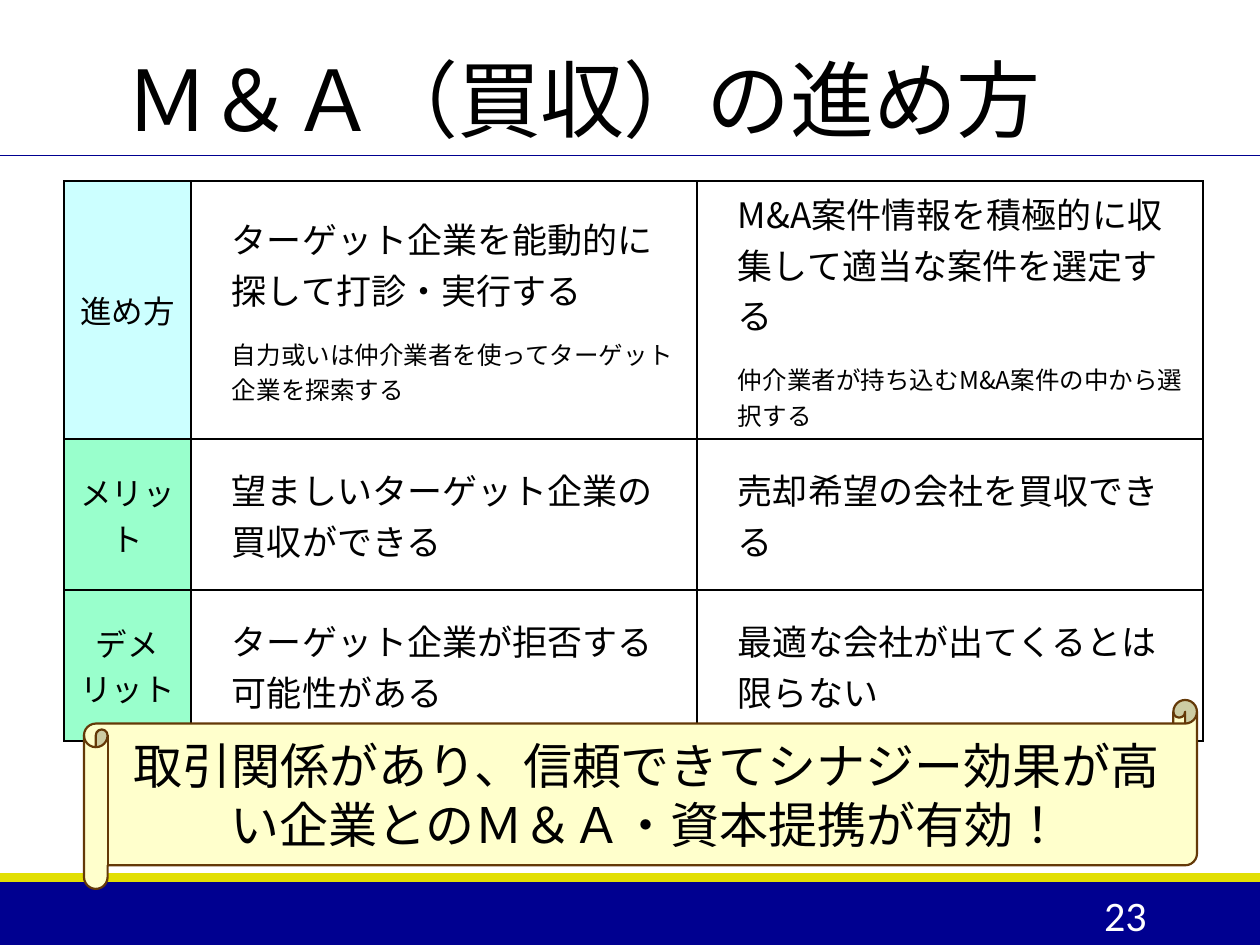
"""Build the slide comparing two ways of proceeding with an acquisition."""
from dataclasses import dataclass

from lxml.etree import SubElement
from pptx import Presentation
from pptx.dml.color import RGBColor
from pptx.enum.shapes import MSO_CONNECTOR, MSO_SHAPE
from pptx.enum.text import MSO_ANCHOR, PP_ALIGN
from pptx.oxml.ns import qn
from pptx.util import Pt

PIXEL = 914400 / 126


@dataclass(frozen=True)
class Theme:
    navy: str = "000090"
    yellow: str = "E2DF04"
    white: str = "FFFFFF"
    black: str = "000000"
    cyan: str = "CCFFFF"
    green: str = "99FFCC"
    cream: str = "FFFFCC"
    brown: str = "643908"
    heading_font: str = "Calibri"
    body_font: str = "Noto Sans CJK JP"
    title_size: int = 48
    banner_size: int = 28
    number_size: int = 24
    point_size: int = 20
    label_size: int = 18
    detail_size: int = 14


@dataclass(frozen=True)
class Box:
    left: int
    top: int
    width: int
    height: int

    def emu(self) -> tuple:
        return tuple(px(value) for value in (self.left, self.top, self.width, self.height))


@dataclass(frozen=True)
class Row:
    label: str
    fill: str
    height: int
    cells: tuple


THEME = Theme()
COLUMN_WIDTHS = (127, 506, 506)
ROWS = (
    Row("進め方", THEME.cyan, 258, (
        ("ターゲット企業を能動的に探して打診・実行する",
         "自力或いは仲介業者を使ってターゲット企業を探索する"),
        ("M&A案件情報を積極的に収集して適当な案件を選定する",
         "仲介業者が持ち込むM&A案件の中から選択する"),
    )),
    Row("メリット", THEME.green, 151, (
        ("望ましいターゲット企業の買収ができる",),
        ("売却希望の会社を買収できる",),
    )),
    Row("デメリット", THEME.green, 151, (
        ("ターゲット企業が拒否する可能性がある",),
        ("最適な会社が出てくるとは限らない",),
    )),
)


def px(value: int) -> int:
    """Turn pixels into EMU."""
    return round(value * PIXEL)


def write(paragraph, text: str, *, size: int, font: str = THEME.heading_font,
          color: str = THEME.black, align=PP_ALIGN.LEFT, after: int = 0,
          line_spacing: float = 1.0, tracking: int = 0) -> None:
    """Put one formatted run into a paragraph."""
    paragraph.alignment = align
    paragraph.space_after = Pt(after)
    paragraph.line_spacing = line_spacing
    run = paragraph.add_run()
    run.text = text
    run.font.size = Pt(size)
    run.font.name = font
    run.font.color.rgb = RGBColor.from_string(color)
    properties = run.font._element
    properties.set("lang", "ja-JP")
    if tracking:
        properties.set("spc", str(tracking))
    SubElement(properties, qn("a:ea")).set("typeface", font)


def add_filled_shape(slide, kind, box: Box, fill: str, line: str = ""):
    """Add a flat preset shape with an optional outline."""
    shape = slide.shapes.add_shape(kind, *box.emu())
    shape.shadow.inherit = False
    shape.fill.solid()
    shape.fill.fore_color.rgb = RGBColor.from_string(fill)
    if line:
        shape.line.color.rgb = RGBColor.from_string(line)
        shape.line.width = Pt(1.25)
    else:
        shape.line.fill.background()
    return shape


def add_label(slide, box: Box, text: str, anchor, **text_format) -> None:
    """Add a wrapped text box with one paragraph."""
    frame = slide.shapes.add_textbox(*box.emu()).text_frame
    frame.word_wrap = True
    frame.vertical_anchor = anchor
    write(frame.paragraphs[0], text, **text_format)


def add_rule(slide, top: int, width: int) -> None:
    """Add the thin line under the title."""
    connector = slide.shapes.add_connector(MSO_CONNECTOR.STRAIGHT, 0, px(top), px(width), px(top))
    connector.line.color.rgb = RGBColor.from_string(THEME.navy)
    connector.line.width = Pt(0.5)
    SubElement(connector._element.spPr, qn("a:effectLst"))


def style_cell(cell, fill: str) -> None:
    """Give a cell its borders, fill and anchor."""
    properties = cell._tc.get_or_add_tcPr()
    for side in ("a:lnL", "a:lnR", "a:lnT", "a:lnB"):
        border = SubElement(properties, qn(side), w=str(Pt(1)))
        solid = SubElement(border, qn("a:solidFill"))
        SubElement(solid, qn("a:srgbClr"), val=THEME.black)
    cell.vertical_anchor = MSO_ANCHOR.MIDDLE
    if fill:
        cell.fill.solid()
        cell.fill.fore_color.rgb = RGBColor.from_string(fill)
    else:
        cell.fill.background()


def add_comparison(slide, left: int, top: int) -> None:
    """Add the comparison table."""
    box = Box(left, top, sum(COLUMN_WIDTHS), sum(row.height for row in ROWS))
    table = slide.shapes.add_table(len(ROWS), len(COLUMN_WIDTHS), *box.emu()).table
    table.first_row = table.horz_banding = False
    for column, width in zip(table.columns, COLUMN_WIDTHS):
        column.width = px(width)
    for row_index, row in enumerate(ROWS):
        table.rows[row_index].height = px(row.height)
        label = table.cell(row_index, 0)
        style_cell(label, row.fill)
        write(label.text_frame.paragraphs[0], row.label, size=THEME.label_size,
              font=THEME.body_font, align=PP_ALIGN.CENTER, after=6)
        for column_index, texts in enumerate(row.cells, start=1):
            cell = table.cell(row_index, column_index)
            style_cell(cell, "")
            cell.margin_left = px(41)
            frame = cell.text_frame
            for index, text in enumerate(texts):
                paragraph = frame.add_paragraph() if index else frame.paragraphs[0]
                size = THEME.detail_size if index else THEME.point_size
                write(paragraph, text, size=size, font=THEME.body_font, after=12)


def main() -> None:
    """Build and save the slide."""
    presentation = Presentation()
    presentation.slide_width, presentation.slide_height = px(1260), px(945)
    slide = presentation.slides.add_slide(presentation.slide_layouts[6])
    add_filled_shape(slide, MSO_SHAPE.RECTANGLE, Box(0, 882, 1260, 63), THEME.navy)
    add_filled_shape(slide, MSO_SHAPE.RECTANGLE, Box(0, 873, 1260, 9), THEME.yellow)
    add_rule(slide, 155, 1260)
    add_label(slide, Box(1023, 890, 136, 50), "23", MSO_ANCHOR.MIDDLE,
              size=THEME.number_size, color=THEME.white, align=PP_ALIGN.RIGHT)
    add_comparison(slide, 64, 181)
    add_label(slide, Box(113, 39, 1040, 116), "Ｍ＆Ａ（買収）の進め方", MSO_ANCHOR.BOTTOM,
              size=THEME.title_size, line_spacing=0.85, tracking=-50)
    banner = add_filled_shape(slide, MSO_SHAPE.HORIZONTAL_SCROLL, Box(84, 700, 1113, 189),
                              THEME.cream, THEME.brown)
    banner.text_frame.word_wrap = True
    banner.text_frame.vertical_anchor = MSO_ANCHOR.MIDDLE
    write(banner.text_frame.paragraphs[0],
          "取引関係があり、信頼できてシナジー効果が高い企業とのＭ＆Ａ・資本提携が有効！",
          size=THEME.banner_size, align=PP_ALIGN.CENTER)
    presentation.save("out.pptx")


if __name__ == "__main__":
    main()
